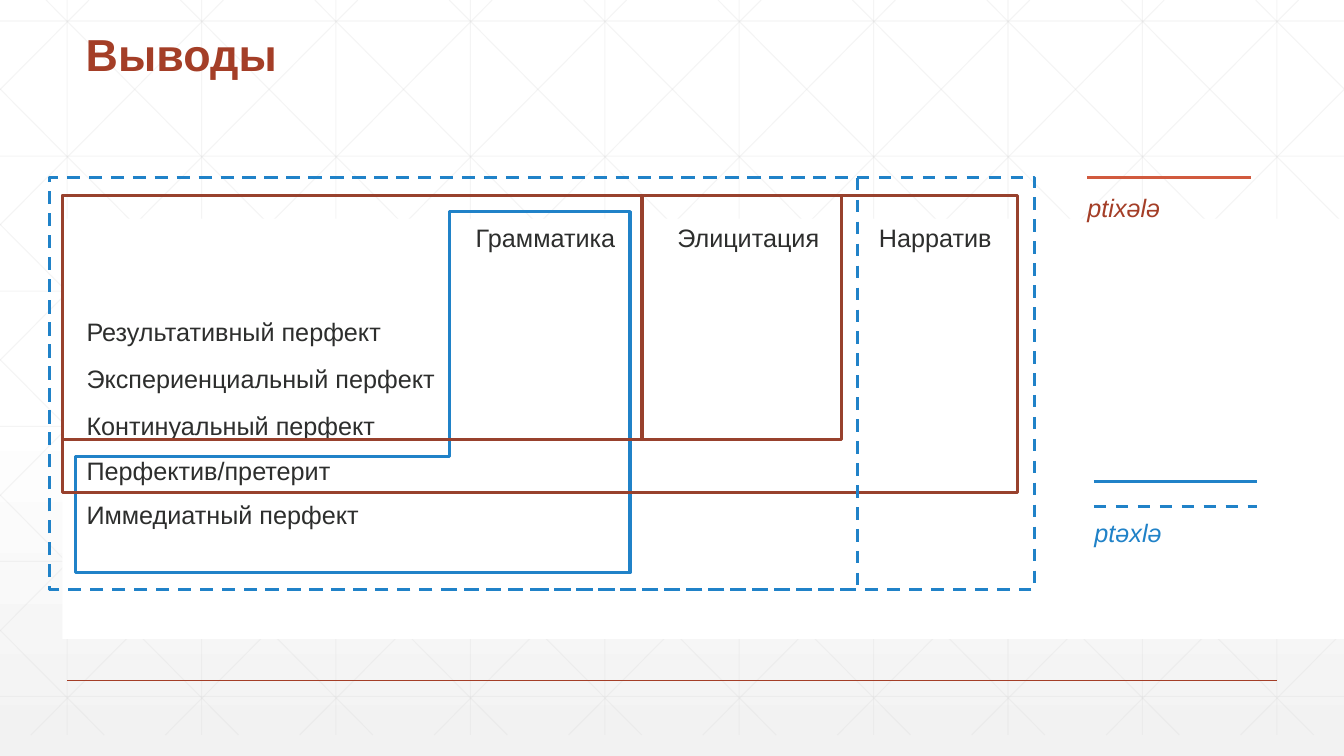
"""Build the conclusions slide: verb forms compared across three kinds of data."""
from lxml import etree
from pptx import Presentation
from pptx import util as u
from pptx.dml import color
from pptx.enum import dml, shapes, text
from pptx.oxml import ns

COLORS = {"white": "FFFFFF", "haze": "F2F2F2", "grid": "D8D8D8", "ink": "2D2E2D",
          "rust": "A43E27", "frame": "98412D", "coral": "D15A3E", "blue": "2082C8"}
FONT = "Arial"
WIDTH, HEIGHT = 960, 540
TITLE = "Выводы"
COLUMNS = [("Грамматика", 8), ("Элицитация", 2), ("Нарратив", 2)]
ROWS = [("Результативный перфект", 47.9), ("Экспериенциальный перфект", 14.3),
        ("Континуальный перфект", 14.3), ("Перфектив/претерит", 12.6),
        ("Иммедиатный перфект", 11.8)]
FRAMES = [("frame", False, 44.6, 139.5, [(414, 174.5), (556.5, 174.5), (682.5, 212.5)]),
          ("blue", True, 35.5, 126.8, [(577, 294.3), (703.5, 294.3)])]
LEGEND_LINES = [("coral", False, 776.6, 126.8), ("blue", False, 781.4, 344),
                ("blue", True, 781.4, 361.7)]
LEGEND_LABELS = [("ptixələ", "rust", 769.7, 134), ("ptəxlə", "blue", 774.7, 366)]
LEGEND_WIDTH = 116.8
GRID_BOTTOM, GRID_STEP, GRID_ROW_STEP, SLOPE = 525, 96, 96.5, 0.9933


def rgb(name):
    return color.RGBColor.from_string(COLORS[name])


def style_line(shape, name, weight=2.25, dashed=False):
    shape.line.color.rgb = rgb(name)
    shape.line.width = u.Pt(weight)
    if dashed:
        shape.line.dash_style = dml.MSO_LINE.DASH


def add_line(page, start, end, name, weight=2.25, dashed=False, alpha=None):
    points = [u.Pt(value) for value in (*start, *end)]
    line = page.shapes.add_connector(shapes.MSO_CONNECTOR.STRAIGHT, *points)
    style_line(line, name, weight, dashed)
    properties = line.element.spPr
    etree.SubElement(properties, ns.qn("a:effectLst"))
    if alpha:
        tint = properties.find(".//" + ns.qn("a:srgbClr"))
        etree.SubElement(tint, ns.qn("a:alpha"), val=str(alpha * 1000))


def add_outline(page, kind, box, name, dashed=False):
    shape = page.shapes.add_shape(kind, *[u.Pt(value) for value in box])
    shape.shadow.inherit = False
    shape.fill.background()
    style_line(shape, name, dashed=dashed)
    return shape


def place(shape, left, top, width, height):
    shape.left, shape.top = u.Pt(left), u.Pt(top)
    shape.width, shape.height = u.Pt(width), u.Pt(height)


def style_text(para, size, name, bold=False, italic=False):
    para.alignment = text.PP_ALIGN.LEFT
    for span in para.runs:
        span.font.name, span.font.size = FONT, u.Pt(size)
        span.font.bold, span.font.italic = bold, italic
        span.font.color.rgb = rgb(name)


def diagonal(x_at_top, slope):
    edges = sorted((x - x_at_top) / slope - 15 for x in (0, WIDTH))
    ends = max(0, edges[0]), min(GRID_BOTTOM, edges[1])
    return [(x_at_top + slope * (y + 15), y) for y in ends]


def draw_grid(page):
    lines = [((x, 0), (x, GRID_BOTTOM)) for x in range(48, WIDTH, GRID_STEP)]
    lines += [((0, y), (WIDTH, y)) for y in (15 + GRID_ROW_STEP * i for i in range(6))]
    lines += [diagonal(18 + GRID_STEP * i, SLOPE) for i in range(-5, 10)]
    lines += [diagonal(78.5 + GRID_STEP * i, -SLOPE) for i in range(15)]
    for start, end in lines:
        add_line(page, start, end, "grid", 0.75, alpha=25)
    add_line(page, (48, 486), (912, 486), "rust", 1)


def fill_title(title):
    place(title, 54, 10, 756, 90)
    frame = title.text_frame
    frame.text = TITLE
    frame.vertical_anchor = text.MSO_ANCHOR.BOTTOM
    frame.margin_bottom = u.Pt(42)
    frame.auto_size = text.MSO_AUTO_SIZE.NONE
    frame.paragraphs[0].line_spacing = 0.9
    style_text(frame.paragraphs[0], 32, "rust", bold=True)


def fill_body(body):
    place(body, 44.6, 156.2, 915.4, 300.2)
    body.fill.solid()
    body.fill.fore_color.rgb = rgb("white")
    frame = body.text_frame
    frame.auto_size = text.MSO_AUTO_SIZE.NONE
    frame.vertical_anchor = text.MSO_ANCHOR.TOP
    frame.margin_top = u.Pt(4.8)
    header = "".join("\t" * tabs + column for column, tabs in COLUMNS)
    lines = [(header, 0), *ROWS]
    frame.text = "\n".join(line for line, gap in lines)
    for index, (para, (line, gap)) in enumerate(zip(frame.paragraphs, lines)):
        para.line_spacing = 0.9
        para.space_before = u.Pt(gap)
        style_text(para, 18, "ink")
        properties = para._p.get_or_add_pPr()
        properties.set("marL", str(u.Pt(10) if index else 0))
        properties.set("indent", "0")
        etree.SubElement(properties, ns.qn("a:buNone"))


def draw_frames(page):
    corner = add_outline(page, shapes.MSO_SHAPE.CORNER, (123.1, 82.1, 257.8, 396), "blue")
    corner.rotation = 270
    corner.adjustments[0], corner.adjustments[1] = 0.5, 0.322
    for name, dashed, left, top, sizes in FRAMES:
        for size in sizes:
            add_outline(page, shapes.MSO_SHAPE.RECTANGLE, (left, top, *size), name, dashed)


def draw_legend(page):
    for name, dashed, left, top in LEGEND_LINES:
        add_line(page, (left, top), (left + LEGEND_WIDTH, top), name, dashed=dashed)
    for label, name, left, top in LEGEND_LABELS:
        box = page.shapes.add_textbox(u.Pt(left), u.Pt(top), u.Pt(LEGEND_WIDTH), u.Pt(29))
        box.text_frame.word_wrap = True
        box.text_frame.text = label
        style_text(box.text_frame.paragraphs[0], 18, name, italic=True)


def main():
    deck = Presentation()
    deck.slide_width, deck.slide_height = u.Pt(WIDTH), u.Pt(HEIGHT)
    page = deck.slides.add_slide(deck.slide_layouts[1])
    backdrop = page.background.fill
    backdrop.gradient()
    backdrop.gradient_angle = 270
    for stop, name, position in zip(backdrop.gradient_stops, ("white", "haze"), (0.53, 1)):
        stop.color.rgb = rgb(name)
        stop.position = position
    title, body = page.placeholders
    draw_grid(page)
    for holder in (title, body):
        holder.element.getparent().append(holder.element)
    fill_title(title)
    fill_body(body)
    draw_frames(page)
    draw_legend(page)
    deck.save("out.pptx")


if __name__ == "__main__":
    main()
